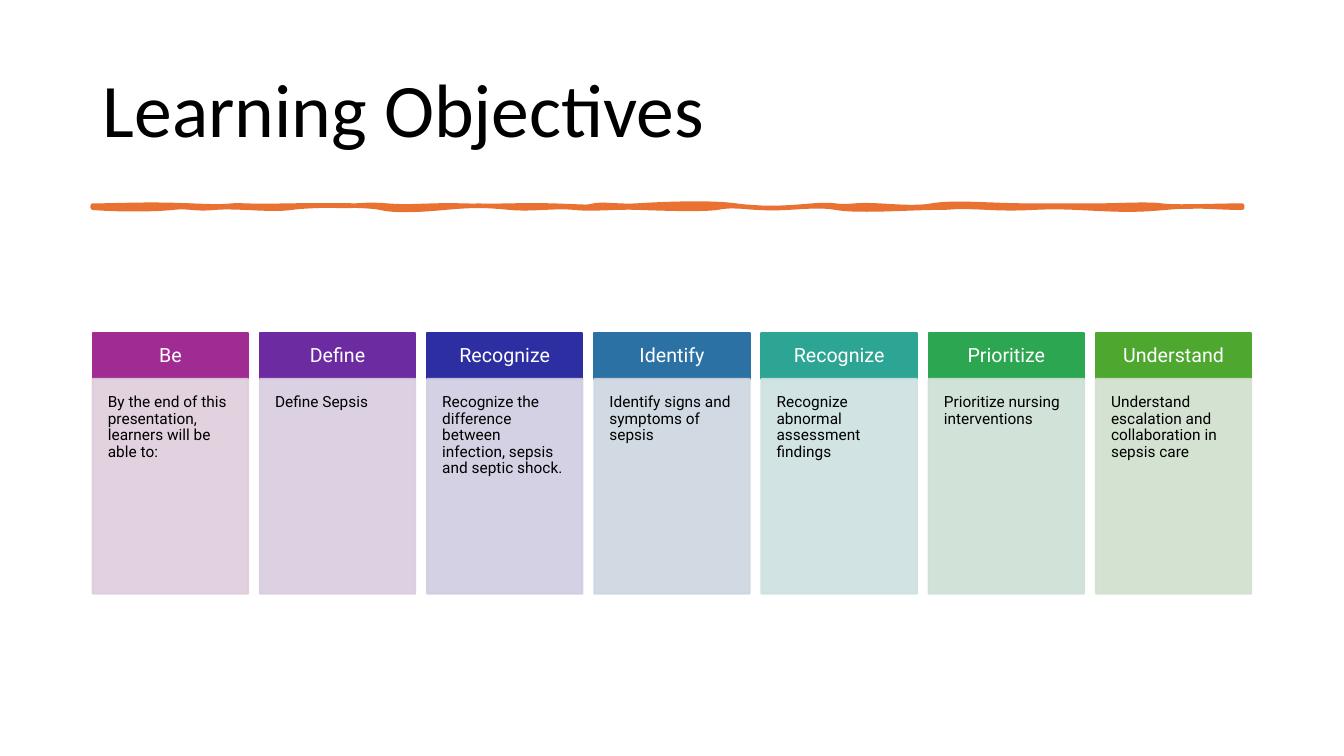
from lxml import etree
from pptx import Presentation
from pptx import util as u
from pptx.dml.color import RGBColor
from pptx.enum import shapes, text
from pptx.oxml.ns import qn

BLACK = RGBColor(0x00, 0x00, 0x00)
WHITE = RGBColor(0xFF, 0xFF, 0xFF)
ORANGE = RGBColor(0xE9, 0x71, 0x32)
MAGENTA, PALE_MAGENTA = RGBColor(0xA0, 0x2B, 0x93), RGBColor(0xDF, 0xCD, 0xDC)
PURPLE, PALE_PURPLE = RGBColor(0x6C, 0x2B, 0xA1), RGBColor(0xD9, 0xCD, 0xE0)
INDIGO, PALE_INDIGO = RGBColor(0x2C, 0x2E, 0xA2), RGBColor(0xCF, 0xCD, 0xE0)
BLUE, PALE_BLUE = RGBColor(0x2C, 0x71, 0xA4), RGBColor(0xCD, 0xD6, 0xE0)
TEAL, PALE_TEAL = RGBColor(0x2D, 0xA5, 0x94), RGBColor(0xCD, 0xE1, 0xE0)
GREEN, PALE_GREEN = RGBColor(0x2D, 0xA6, 0x51), RGBColor(0xCD, 0xE1, 0xD5)
LEAF, PALE_LEAF = RGBColor(0x4E, 0xA7, 0x2E), RGBColor(0xD0, 0xE1, 0xCD)

TITLE = "Learning Objectives"
OBJECTIVES = [
    ("Be", "By the end of this presentation, learners will be able to:", MAGENTA, PALE_MAGENTA),
    ("Define", "Define Sepsis", PURPLE, PALE_PURPLE),
    ("Recognize", "Recognize the difference between infection, sepsis and septic shock.",
     INDIGO, PALE_INDIGO),
    ("Identify", "Identify signs and symptoms of sepsis", BLUE, PALE_BLUE),
    ("Recognize", "Recognize abnormal assessment findings", TEAL, PALE_TEAL),
    ("Prioritize", "Prioritize nursing interventions", GREEN, PALE_GREEN),
    ("Understand", "Understand escalation and collaboration in sepsis care", LEAF, PALE_LEAF),
]

# Brush stroke edges: (handle x, handle rise or fall, knot x)
STROKE_TOP = [
    (1.44, -.02, 1.9), (2.2, -.01, 2.44), (3.03, -.01, 3.31), (3.59, -.02, 3.84),
    (4.23, -.01, 4.6), (5.14, -.01, 5.48), (5.81, .02, 5.89), (6.15, .01, 6.31),
    (7.01, -.04, 7.3), (7.81, .02, 8.06), (8.27, .02, 8.48), (9.01, .04, 9.24),
    (9.82, 0, 10.23), (10.63, 0, 10.87), (11.36, -.02, 11.52), (12.03, 0, 12.32),
]
STROKE_BOTTOM = [
    (11.89, -.03, 11.56), (11.1, .02, 10.68), (10.23, .02, 9.81), (9.52, 0, 9.28),
    (8.51, .04, 8.29), (7.82, .02, 7.53), (7.24, -.02, 7.11), (6.61, .01, 6.35),
    (5.9, .02, 5.7), (5.28, .02, 5.06), (4.73, -.03, 4.41), (3.9, .03, 3.77),
    (3.1, -.03, 2.89), (2.35, -.02, 2.13), (1.89, -.02, 1.71), (1.14, .02, 0.92),
]

LEFT, WIDTH = 0.92, 11.5
STROKE_RIGHT = 12.32
STROKE_TOP_Y, STROKE_BOTTOM_Y = 2.04, 2.06
COLUMN_WIDTH, LAST_COLUMN_LEFT = 1.54, 10.87
PITCH = (LAST_COLUMN_LEFT - LEFT) / (len(OBJECTIVES) - 1)
HEAD_TOP, HEAD_HEIGHT, BODY_HEIGHT = 3.3, 0.46, 2.13


def wavy_edge(y, first_handle_x, knots):
    """Curves as (handle, handle, knot) points; handles mirror each other at every knot."""
    curves = []
    x1, rise1 = first_handle_x, 0
    for x2, rise2, knot_x in knots:
        curves.append(((x1, y + rise1), (x2, y + rise2), (knot_x, y)))
        x1, rise1 = 2 * knot_x - x2, -rise2
    return curves


def emu(point):
    return tuple(u.Inches(length) for length in point)


def bend(segment, handles, origin):
    """Turn a straight segment of an outline into a curve."""
    segment.tag = qn("a:cubicBezTo")
    for place, handle in enumerate(handles):
        x, y = (value - start for value, start in zip(emu(handle), origin))
        segment.insert(place, segment.makeelement(qn("a:pt"), {"x": str(x), "y": str(y)}))


def paint(shape, color, line_width):
    shape.shadow.inherit = False
    shape.fill.solid()
    shape.fill.fore_color.rgb = color
    shape.line.color.rgb = color
    shape.line.width = u.Pt(line_width)


def write(shape, words, font, size, color, align, anchor):
    frame = shape.text_frame
    frame.text = words
    frame.word_wrap = True
    frame.vertical_anchor = anchor
    paragraph = frame.paragraphs[0]
    paragraph.alignment = align
    paragraph.line_spacing = 0.9
    paragraph.font.name = font
    paragraph.font.size = u.Pt(size)
    paragraph.font.color.rgb = color


def add_box(slide, left, top, height, color, inset):
    box = slide.shapes.add_shape(shapes.MSO_SHAPE.RECTANGLE, u.Inches(left), u.Inches(top),
                                 u.Inches(COLUMN_WIDTH), u.Inches(height))
    paint(box, color, 1.5)
    frame = box.text_frame
    frame.margin_left = frame.margin_right = u.Inches(inset)
    frame.margin_top = frame.margin_bottom = u.Inches(inset)
    return box


def add_title(slide):
    title = slide.shapes.title
    title.left, title.top = u.Inches(LEFT), u.Inches(0.4)
    title.width, title.height = u.Inches(WIDTH), u.Inches(1.45)
    write(title, TITLE, "Calibri", 54, BLACK, text.PP_ALIGN.LEFT, text.MSO_ANCHOR.MIDDLE)


def add_brush_stroke(slide):
    top = wavy_edge(STROKE_TOP_Y, 1.19, STROKE_TOP)
    bottom = wavy_edge(STROKE_BOTTOM_Y, 12.05, STROKE_BOTTOM)
    right_end = ((STROKE_RIGHT, STROKE_BOTTOM_Y),)
    outline = top + [right_end] + bottom
    builder = slide.shapes.build_freeform(*emu((LEFT, STROKE_TOP_Y)))
    builder.add_line_segments([emu(knot) for *_, knot in outline], close=True)
    stroke = builder.convert_to_shape()
    segments = list(stroke._element.iter(qn("a:lnTo")))
    for segment, (*handles, _) in zip(segments, outline):
        if handles:
            bend(segment, handles, (stroke.left, stroke.top))
    paint(stroke, ORANGE, 3.25)
    etree.SubElement(stroke.line._get_or_add_ln(), qn("a:round"))


def add_objective(slide, column, heading, detail, color, pale):
    left = LEFT + column * PITCH
    head = add_box(slide, left, HEAD_TOP, HEAD_HEIGHT, color, 0.12)
    write(head, heading, "Roboto", 14, WHITE, text.PP_ALIGN.CENTER, text.MSO_ANCHOR.MIDDLE)
    body = add_box(slide, left, HEAD_TOP + HEAD_HEIGHT, BODY_HEIGHT, pale, 0.15)
    for paint_color in body._element.spPr.iter(qn("a:srgbClr")):
        etree.SubElement(paint_color, qn("a:alpha"), val="90000")
    write(body, detail, "Roboto", 11, BLACK, text.PP_ALIGN.LEFT, text.MSO_ANCHOR.TOP)


def main():
    deck = Presentation()
    deck.slide_width, deck.slide_height = u.Inches(13.33), u.Inches(7.5)
    slide = deck.slides.add_slide(deck.slide_layouts[5])
    add_title(slide)
    add_brush_stroke(slide)
    for column, objective in enumerate(OBJECTIVES):
        add_objective(slide, column, *objective)
    deck.save("out.pptx")


if __name__ == "__main__":
    main()
